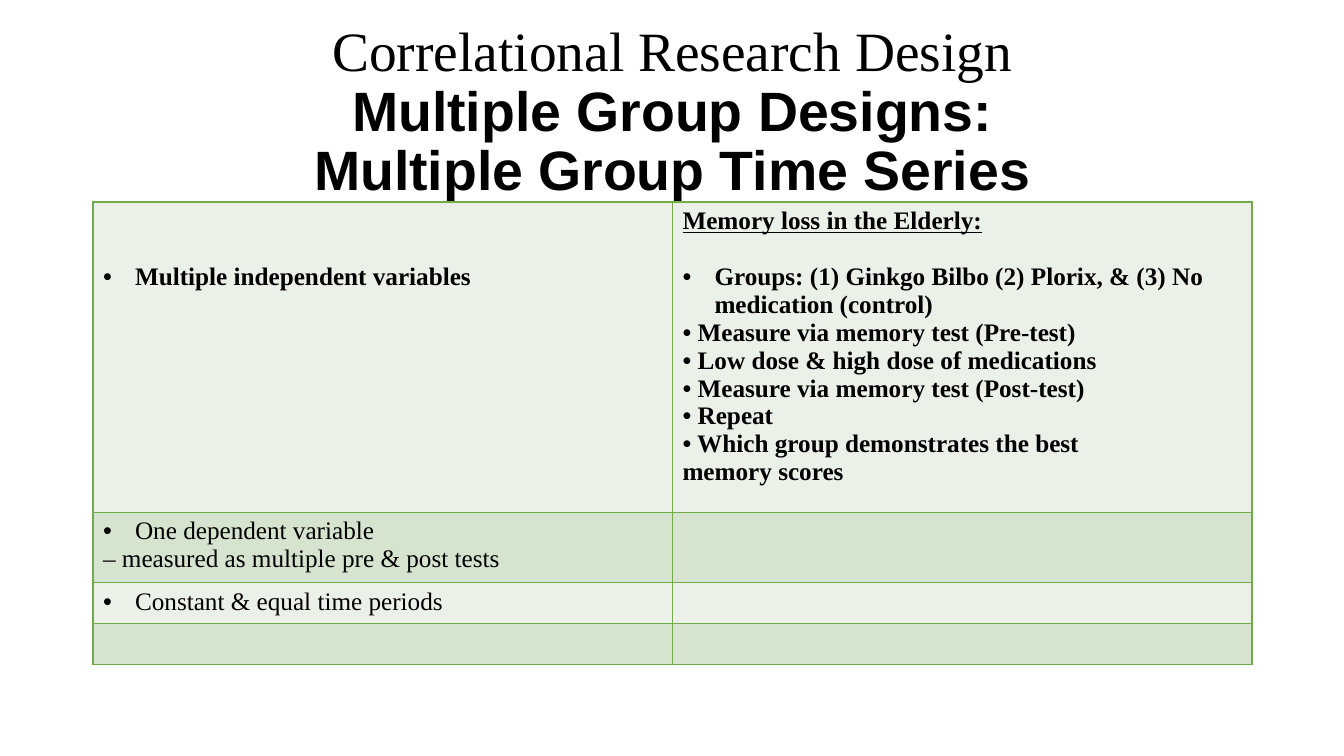
"""Build the slide on multiple group time series designs."""
from lxml.etree import SubElement
from pptx import Presentation
from pptx.dml.color import RGBColor
from pptx.enum.text import MSO_ANCHOR, PP_ALIGN
from pptx.oxml import parse_xml
from pptx.oxml.ns import nsdecls, qn
from pptx.util import Pt

PX = 914400 / 100.8
THEME = dict(ink="000000", border="70AD47", bands=("EBF1E9", "D5E3CF"),
             title=39.6, body=18, serif="Times New Roman", sans="Arial")


def px(n):
    return round(n * PX)


def add_run(p, text, **fmt):
    r = p.add_run()
    r.text = text
    r.font.color.rgb = RGBColor.from_string(THEME["ink"])
    for name, value in fmt.items():
        setattr(r.font, name, value)


prs = Presentation()
prs.slide_width, prs.slide_height = px(1344), px(756)
s = prs.slides.add_slide(prs.slide_layouts[6])

sp = s.shapes.add_textbox(px(93), px(40), px(1159), px(146))
tf = sp.text_frame
tf.word_wrap = True
tf.vertical_anchor = MSO_ANCHOR.MIDDLE
p = tf.paragraphs[0]
p.alignment, p.line_spacing = PP_ALIGN.CENTER, 0.9
add_run(p, "Correlational Research Design", size=Pt(THEME["title"]), name=THEME["serif"])
for line in ("Multiple Group Designs:", "Multiple Group Time Series"):
    p.add_line_break()
    add_run(p, line, size=Pt(THEME["title"]), name=THEME["sans"], bold=True)

BULLET, UNDERLINE, GAP = "bullet", "underline", "gap"
rows = [
    (289, [("Multiple independent variables", {BULLET})],
     [("Memory loss in the Elderly:", {UNDERLINE}),
      ("Groups: (1) Ginkgo Bilbo (2) Plorix, & (3) No medication (control)", {BULLET, GAP}),
      ("• Measure via memory test (Pre-test)", set()),
      ("• Low dose & high dose of medications", set()),
      ("• Measure via memory test (Post-test)", set()),
      ("• Repeat", set()),
      ("• Which group demonstrates the best", set()),
      ("memory scores", set())]),
    (66, [("One dependent variable", {BULLET}),
          ("– measured as multiple pre & post tests", set())], []),
    (41, [("Constant & equal time periods", {BULLET})], []),
    (41, [], []),
]
height = sum(row[0] for row in rows)
table = s.shapes.add_table(len(rows), 2, px(93), px(202), px(1159), px(height)).table
table.first_row = table.horz_banding = False

for i, (row_height, *cells) in enumerate(rows):
    table.rows[i].height = px(row_height)
    for j, lines in enumerate(cells):
        cell = table.cell(i, j)
        cell.fill.solid()
        cell.fill.fore_color.rgb = RGBColor.from_string(THEME["bands"][i % 2])
        tcPr = cell._tc.get_or_add_tcPr()
        for k, side in enumerate("LRTB"):
            tcPr.insert(k, parse_xml(
                f'<a:ln{side} w="12700" {nsdecls("a")}><a:solidFill>'
                f'<a:srgbClr val="{THEME["border"]}"/></a:solidFill></a:ln{side}>'))
        tf = cell.text_frame
        for n, (text, marks) in enumerate(lines):
            p = tf.add_paragraph() if n else tf.paragraphs[0]
            if GAP in marks:
                p.space_before = Pt(20)
            if BULLET in marks:
                pPr = p._p.get_or_add_pPr()
                pPr.set("marL", str(px(32)))
                pPr.set("indent", str(-px(32)))
                SubElement(pPr, qn("a:buFont"), typeface=THEME["sans"])
                SubElement(pPr, qn("a:buChar"), char="•")
            add_run(p, text, size=Pt(THEME["body"]), name=THEME["serif"],
                    bold=i == 0, underline=UNDERLINE in marks)

table.cell(0, 0).margin_top = px(61)
prs.save("out.pptx")
